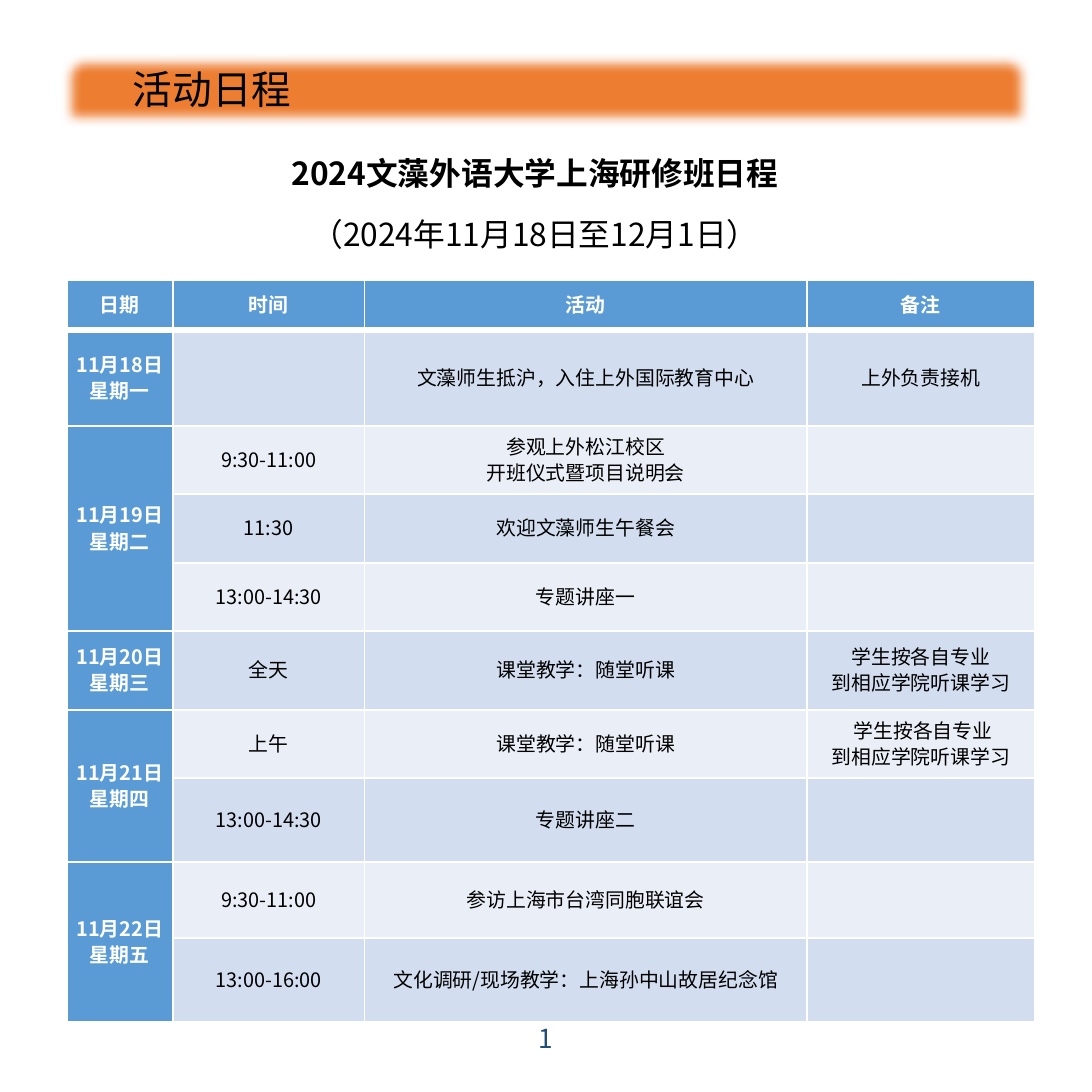
"""Builds the study programme schedule slide."""
from lxml.etree import SubElement
from pptx import Presentation
from pptx.dml.color import RGBColor
from pptx.enum.shapes import MSO_SHAPE
from pptx.enum.text import MSO_ANCHOR, PP_ALIGN
from pptx.oxml.ns import qn
from pptx.util import Inches, Pt

BLACK, WHITE, NAVY = "000000", "FFFFFF", "1F4E79"
ORANGE, BLUE = "ED7D31", "5B9BD5"
BANDS = ["D2DEEF", "EAEFF7"]
HEADINGS = ["日期", "时间", "活动", "备注"]
COLUMN_WIDTHS = [0.67, 1.21, 2.79, 1.44]
HEADER_HEIGHT = 0.31
CLASS_NOTE = "学生按各自专业\n到相应学院听课学习"
DAYS = [
    ("11月18日\n星期一", [(0.61, "", "文藻师生抵沪，入住上外国际教育中心", "上外负责接机")]),
    ("11月19日\n星期二", [
        (0.43, "9:30-11:00", "参观上外松江校区\n开班仪式暨项目说明会", ""),
        (0.43, "11:30", "欢迎文藻师生午餐会", ""),
        (0.43, "13:00-14:30", "专题讲座一", ""),
    ]),
    ("11月20日\n星期三", [(0.43, "全天", "课堂教学：随堂听课", CLASS_NOTE)]),
    ("11月21日\n星期四", [
        (0.43, "上午", "课堂教学：随堂听课", " " + CLASS_NOTE),
        (0.53, "13:00-14:30", "专题讲座二", ""),
    ]),
    ("11月22日\n星期五", [
        (0.48, "9:30-11:00", "参访上海市台湾同胞联谊会", ""),
        (0.53, "13:00-16:00", "文化调研/现场教学：上海孙中山故居纪念馆", ""),
    ]),
]


def color(value):
    return RGBColor.from_string(value)


class SlideBuilder:
    font_name = "Noto Sans CJK SC"

    def __init__(self, slide):
        self.slide = slide

    def add_run(self, paragraph, text, size, text_color, bold=False):
        run = paragraph.add_run()
        run.text = text
        run.font.name = self.font_name
        run.font.size = Pt(size)
        run.font.bold = bold
        run.font.color.rgb = color(text_color)
        east_asian = SubElement(run.font._element, qn("a:ea"))
        east_asian.set("typeface", self.font_name)

    def banner(self, left, top, width, height):
        shape = self.slide.shapes.add_shape(
            MSO_SHAPE.ROUND_2_SAME_RECTANGLE,
            Inches(left), Inches(top), Inches(width), Inches(height))
        shape.shadow.inherit = False
        shape.fill.solid()
        shape.fill.fore_color.rgb = color(ORANGE)
        shape.line.fill.background()
        effects = shape._element.spPr.find(qn("a:effectLst"))
        SubElement(effects, qn("a:softEdge")).set("rad", str(Pt(5)))

    def text(self, left, top, width, height, lines, size, text_color=BLACK,
             align=PP_ALIGN.CENTER, gap=0, wrap=True):
        shape = self.slide.shapes.add_textbox(
            Inches(left), Inches(top), Inches(width), Inches(height))
        frame = shape.text_frame
        frame.word_wrap = wrap
        frame.vertical_anchor = MSO_ANCHOR.MIDDLE
        for index, (line, bold) in enumerate(lines):
            paragraph = frame.add_paragraph() if index else frame.paragraphs[0]
            paragraph.alignment = align
            paragraph.space_before = Pt(gap if index else 0)
            self.add_run(paragraph, line, size, text_color, bold)

    def cell(self, cell, text, fill, top_line=1, bottom_line=1, heading=False):
        cell.margin_left = cell.margin_right = Inches(0.04)
        cell.margin_top = cell.margin_bottom = 0
        cell.vertical_anchor = MSO_ANCHOR.MIDDLE
        properties = cell._tc.get_or_add_tcPr()
        for side, width in zip("LRTB", (1, 1, top_line, bottom_line)):
            line = SubElement(properties, qn(f"a:ln{side}"), w=str(Pt(width)))
            line_fill = SubElement(line, qn("a:solidFill"))
            SubElement(line_fill, qn("a:srgbClr"), val=WHITE)
        cell.fill.solid()
        cell.fill.fore_color.rgb = color(fill)
        if not text:
            return
        for index, line in enumerate(text.split("\n")):
            frame = cell.text_frame
            paragraph = frame.add_paragraph() if index else frame.paragraphs[0]
            paragraph.alignment = PP_ALIGN.CENTER
            paragraph.line_spacing = Pt(12)
            self.add_run(paragraph, line, 9, WHITE if heading else BLACK, heading)

    def schedule(self, left, top):
        heights = [HEADER_HEIGHT] + [session[0] for _, sessions in DAYS for session in sessions]
        table = self.slide.shapes.add_table(
            len(heights), len(HEADINGS), Inches(left), Inches(top),
            Inches(sum(COLUMN_WIDTHS)), Inches(sum(heights))).table
        for column, width in zip(table.columns, COLUMN_WIDTHS):
            column.width = Inches(width)
        for row, height in zip(table.rows, heights):
            row.height = Inches(height)
        for column, heading in enumerate(HEADINGS):
            self.cell(table.cell(0, column), heading, BLUE, bottom_line=3, heading=True)
        row = 1
        for date, sessions in DAYS:
            first = row
            for _, *values in sessions:
                top_line = 3 if row == 1 else 1
                self.cell(table.cell(row, 0), date if row == first else "", BLUE,
                          top_line, heading=True)
                for column, value in enumerate(values, 1):
                    self.cell(table.cell(row, column), value, BANDS[(row - 1) % 2], top_line)
                row += 1
            if len(sessions) > 1:
                table.cell(first, 0).merge(table.cell(row - 1, 0))


def main():
    presentation = Presentation()
    presentation.slide_width = presentation.slide_height = Inches(6.89)
    builder = SlideBuilder(presentation.slides.add_slide(presentation.slide_layouts[6]))
    builder.banner(0.39, 0.34, 6.11, 0.46)
    builder.text(0.74, 0.36, 1.21, 0.4, [("活动日程", False)], 18,
                 align=PP_ALIGN.LEFT, wrap=False)
    builder.text(0.25, 0.87, 6.25, 0.83,
                 [("2024文藻外语大学上海研修班日程", True),
                  ("（2024年11月18日至12月1日）", False)], 14.4, gap=10.4)
    builder.schedule(0.42, 1.77)
    builder.text(0, 6.4, 6.89, 0.3, [("1", False)], 11.9, NAVY)
    presentation.save("out.pptx")


if __name__ == "__main__":
    main()
